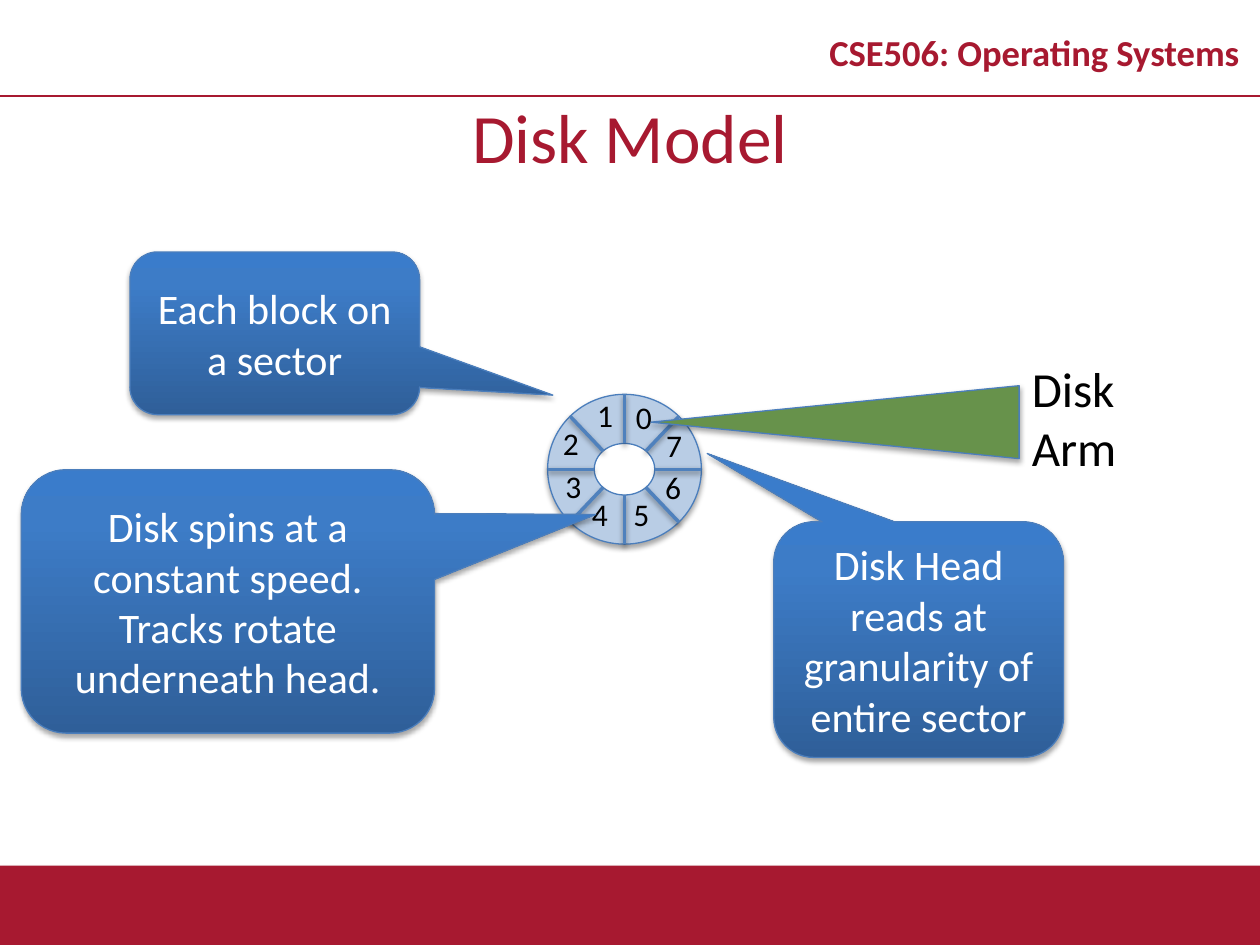
from copy import deepcopy
from dataclasses import dataclass
from math import cos, pi, sin

from lxml.etree import SubElement
from pptx import Presentation
from pptx.dml.color import RGBColor
from pptx.enum.shapes import MSO_CONNECTOR, MSO_SHAPE
from pptx.enum.text import MSO_ANCHOR, MSO_AUTO_SIZE, PP_ALIGN
from pptx.oxml.ns import qn
from pptx.util import Cm, Pt

RED = RGBColor(0xA7, 0x19, 0x30)
BLACK = RGBColor(0, 0, 0)
WHITE = RGBColor(0xFF, 0xFF, 0xFF)
PALE = RGBColor(0xB9, 0xCD, 0xE5)
EDGE = RGBColor(0x4B, 0x7E, 0xBC)
SPOKE = RGBColor(0x4F, 0x81, 0xBD)
GREEN = RGBColor(0x67, 0x92, 0x4B)
DEEP = RGBColor(0x2F, 0x5F, 0x99)
MID = RGBColor(0x3D, 0x7C, 0xC7)
BRIGHT = RGBColor(0x3A, 0x7C, 0xCB)
FONT = "Calibri"


@dataclass
class Box:
    left: float
    top: float
    width: float
    height: float

    def emu(self) -> list:
        return [Cm(v) for v in (self.left, self.top, self.width, self.height)]


@dataclass
class Callout:
    box: Box
    tip: tuple
    lines: list


@dataclass
class Label:
    text: str
    left: float
    top: float


CALLOUTS = [
    Callout(Box(2.62, 5.08, 5.84, 3.28), (0.96, 0.38), ["Each block on a sector"]),
    Callout(Box(15.6, 10.52, 5.84, 4.75), (-0.73, -0.79),
            ["Disk Head reads at granularity of entire sector"]),
    Callout(Box(0.43, 9.47, 8.33, 5.31), (0.89, -0.33),
            ["Disk spins at a constant speed.", "Tracks rotate underneath head."]),
]
LABELS = [
    Label("0", 12.57, 7.9), Label("1", 11.79, 7.85),
    Label("2", 11.1, 8.43), Label("3", 11.15, 9.3),
    Label("4", 11.68, 9.86), Label("5", 12.52, 9.86),
    Label("6", 13.16, 9.32), Label("7", 13.18, 8.46),
]

# Disk centre, outer radii and hub radii in cm
MID_X, MID_Y = 12.59, 9.46
RIM = (1.55, 1.51)
HUB = (0.61, 0.52)


def shade(item, alpha: int = 35, dist: float = 1.8) -> None:
    """Give a soft drop shadow; alpha 0 means none."""
    effect = SubElement(item._element.spPr, qn("a:effectLst"))
    if alpha:
        drop = SubElement(effect, qn("a:outerShdw"), blurRad=str(Pt(3.1)),
                          dist=str(Pt(dist)), dir="5400000", rotWithShape="0")
        tint = SubElement(drop, qn("a:srgbClr"), val="000000")
        SubElement(tint, qn("a:alpha"), val=str(alpha * 1000))


def write(item, lines: list, size: float, color: RGBColor = BLACK, bold: bool = False,
          align=PP_ALIGN.LEFT, anchor=MSO_ANCHOR.TOP, wrap: bool = True,
          space: float | None = None) -> None:
    frame = item.text_frame
    frame.word_wrap = wrap
    frame.auto_size = MSO_AUTO_SIZE.NONE if wrap else MSO_AUTO_SIZE.SHAPE_TO_FIT_TEXT
    frame.vertical_anchor = anchor
    for i, line in enumerate(lines):
        para = frame.add_paragraph() if i else frame.paragraphs[0]
        para.alignment = align
        para.line_spacing = space
        run = para.add_run()
        run.text = line
        run.font.name = FONT
        run.font.size = Pt(size)
        run.font.bold = bold
        run.font.color.rgb = color


def draw(shapes, kind, box: Box, fill: RGBColor, edge: RGBColor | None = EDGE,
         alpha: int = 35):
    item = shapes.add_shape(kind, *box.emu())
    item.fill.solid()
    item.fill.fore_color.rgb = fill
    if edge is None:
        item.line.fill.background()
    else:
        item.line.color.rgb = edge
        item.line.width = Pt(0.75)
    shade(item, alpha)
    return item


def link(shapes, start: tuple, end: tuple, color: RGBColor, width: float,
         alpha: int = 0) -> None:
    ends = [Cm(v) for v in (*start, *end)]
    line = shapes.add_connector(MSO_CONNECTOR.STRAIGHT, *ends)
    line.line.color.rgb = color
    line.line.width = Pt(width)
    shade(line, alpha, 1.6)


def ring(radii: tuple) -> Box:
    wide, high = radii
    return Box(MID_X - wide, MID_Y - high, 2 * wide, 2 * high)


def point(radii: tuple, angle: float) -> tuple:
    return MID_X + radii[0] * cos(angle), MID_Y + radii[1] * sin(angle)


def disk(shapes) -> None:
    group = shapes.add_group_shape().shapes
    draw(group, MSO_SHAPE.OVAL, ring(RIM), PALE)
    draw(group, MSO_SHAPE.OVAL, ring(HUB), WHITE, alpha=0)
    for i in range(8):
        angle = i * pi / 4
        link(group, point(RIM, angle), point(HUB, angle), SPOKE, 2, alpha=38)
    for label in LABELS:
        item = group.add_textbox(*Box(label.left, label.top, 0.84, 1.02).emu())
        write(item, [label.text], 18, wrap=False)


def bubble(shapes, note: Callout) -> None:
    item = draw(shapes, MSO_SHAPE.ROUNDED_RECTANGULAR_CALLOUT, note.box, MID)
    for i, value in enumerate((*note.tip, 0.17)):
        item.adjustments[i] = value
    # Three-stop gradient, dark at the foot
    item.fill.gradient()
    item.fill.gradient_angle = 90
    stops = item._element.spPr.find(qn("a:gradFill")).find(qn("a:gsLst"))
    stops.append(deepcopy(stops[-1]))
    marks = ((0, DEEP), (0.8, MID), (1, BRIGHT))
    for stop, (place, color) in zip(item.fill.gradient_stops, marks):
        stop.position = place
        stop.color.rgb = color
    write(item, note.lines, 24, color=WHITE, align=PP_ALIGN.CENTER,
          anchor=MSO_ANCHOR.MIDDLE)


def main() -> None:
    deck = Presentation()
    deck.slide_width, deck.slide_height = Cm(25.4), Cm(19.05)
    shapes = deck.slides.add_slide(deck.slide_layouts[6]).shapes

    # Footer bar, header and title
    draw(shapes, MSO_SHAPE.RECTANGLE, Box(0, 17.45, 25.4, 1.6), RED, edge=None)
    link(shapes, (0, 1.93), (25.4, 1.93), RED, 1)
    head = shapes.add_textbox(*Box(16.31, 0.33, 9.09, 1.6).emu())
    write(head, ["CSE506: Operating Systems"], 20.9, color=RED, bold=True,
          align=PP_ALIGN.CENTER, anchor=MSO_ANCHOR.MIDDLE, space=0.8)
    title = shapes.add_textbox(*Box(0, 1.93, 25.4, 1.6).emu())
    write(title, ["Disk Model"], 39.6, color=RED, align=PP_ALIGN.CENTER,
          anchor=MSO_ANCHOR.MIDDLE)

    # Disk, first callout, then the arm over the disk
    disk(shapes)
    bubble(shapes, CALLOUTS[0])
    arm = draw(shapes, MSO_SHAPE.ISOSCELES_TRIANGLE, Box(16.1, 4.8, 1.47, 7.42), GREEN)
    arm.rotation = 270
    name = shapes.add_textbox(*Box(20.55, 7.11, 2.24, 2.64).emu())
    write(name, ["Disk", "Arm"], 28, wrap=False)

    # Remaining callouts
    for note in CALLOUTS[1:]:
        bubble(shapes, note)

    deck.save("out.pptx")


if __name__ == "__main__":
    main()
